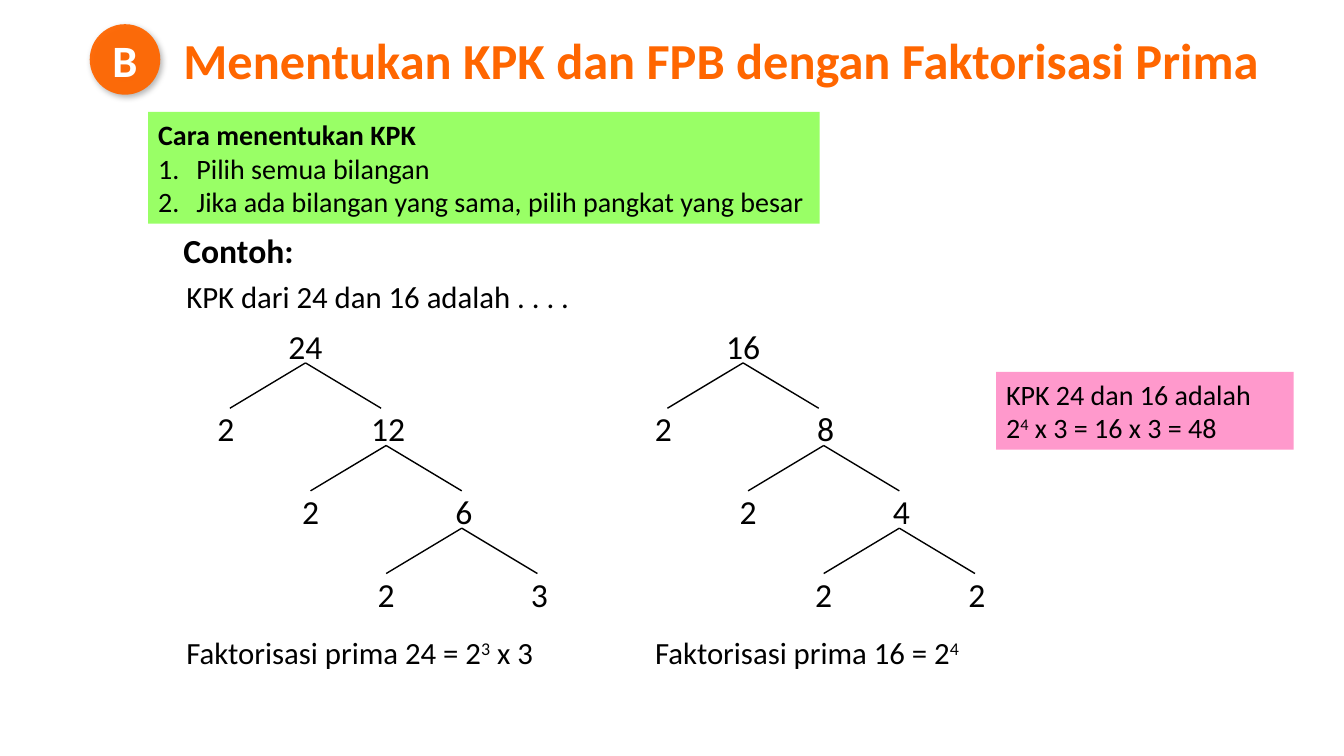
import pptx
import pptx.util
import pptx.dml.color
import pptx.enum.shapes
import pptx.enum.text
from lxml import etree
from pptx.oxml.ns import qn

Inches = pptx.util.Inches
Pt = pptx.util.Pt
ALIGN = pptx.enum.text.PP_ALIGN
SHAPE = pptx.enum.shapes.MSO_SHAPE

COLORS = {
    "orange": "FF6600",
    "green": "99FF66",
    "pink": "FF99CC",
    "black": "000000",
    "white": "FFFFFF",
}
LEVELS = [(0, -0.79, 0.82), (0.8, 0.05, 1.57), (1.55, 0.8, 2.32)]
LEVEL_STEP = 0.82


def rgb(name):
    return pptx.dml.color.RGBColor.from_string(COLORS[name])


def write(p, parts, size, color="black", bold=False, align=ALIGN.LEFT):
    p.alignment = align
    for i, text in enumerate(parts):
        r = p.add_run()
        r.text = text
        r.font.name = "Calibri"
        r.font.size = Pt(size)
        r.font.bold = bold
        r.font.color.rgb = rgb(color)
        if i == 1:
            r._r.get_or_add_rPr().set("baseline", "30000")


def number(p):
    pPr = p._p.get_or_add_pPr()
    pPr.set("marL", str(Inches(0.38)))
    pPr.set("indent", str(-Inches(0.38)))
    etree.SubElement(pPr, qn("a:buFont"), typeface="+mj-lt")
    etree.SubElement(pPr, qn("a:buAutoNum"), type="arabicPeriod")


def add_label(shapes, x, y, w, h, parts, size, **style):
    sp = shapes.add_textbox(Inches(x), Inches(y), Inches(w), Inches(h))
    tf = sp.text_frame
    tf.word_wrap = False
    tf.auto_size = pptx.enum.text.MSO_AUTO_SIZE.SHAPE_TO_FIT_TEXT
    write(tf.paragraphs[0], parts, size, **style)


def add_filled(shapes, kind, x, y, w, h, color):
    sp = shapes.add_shape(kind, Inches(x), Inches(y), Inches(w), Inches(h))
    sp.shadow.inherit = False
    sp.fill.solid()
    sp.fill.fore_color.rgb = rgb(color)
    sp.line.fill.background()
    return sp


def add_badge(shapes, letter):
    sp = add_filled(shapes, SHAPE.OVAL, 0.89, 0.24, 0.7, 0.7, "orange")
    fill_color = sp._element.spPr.find(qn("a:solidFill"))[0]
    etree.SubElement(fill_color, qn("a:alpha"), val="95000")
    effects = sp._element.spPr.find(qn("a:effectLst"))
    shadow = etree.SubElement(effects, qn("a:outerShdw"), blurRad=str(Pt(4.5)),
                              dist=str(Pt(2.6)), dir=str(53 * 60000), rotWithShape="0")
    shade = etree.SubElement(shadow, qn("a:srgbClr"), val=COLORS["black"])
    etree.SubElement(shade, qn("a:alpha"), val="30000")
    tf = sp.text_frame
    tf.margin_left = tf.margin_right = tf.margin_top = tf.margin_bottom = 0
    tf.word_wrap = False
    tf.vertical_anchor = pptx.enum.text.MSO_ANCHOR.MIDDLE
    write(tf.paragraphs[0], [letter], 32, color="white", bold=True, align=ALIGN.CENTER)


def add_panel(shapes, x, y, w, h, color, wrap):
    tf = add_filled(shapes, SHAPE.RECTANGLE, x, y, w, h, color).text_frame
    tf.word_wrap = wrap
    tf.auto_size = pptx.enum.text.MSO_AUTO_SIZE.SHAPE_TO_FIT_TEXT
    return tf


def add_branch(shapes, x, y, dx):
    line = shapes.add_connector(pptx.enum.shapes.MSO_CONNECTOR.STRAIGHT,
                                Inches(x + dx), Inches(y + 0.45), Inches(x), Inches(y))
    line.line.color.rgb = rgb("black")
    line.line.width = Pt(1)
    etree.SubElement(line._element.spPr, qn("a:effectLst"))


def add_node(shapes, x, y, value):
    add_label(shapes, x - 0.27, y, 0.54, 0.5, [str(value)], 24, align=ALIGN.CENTER)


def add_factor_tree(s, x, root, splits):
    shapes = s.shapes.add_group_shape().shapes
    add_node(shapes, x, 3.18, root)
    for i, ((apex, *offsets), factors) in enumerate(zip(LEVELS, splits)):
        for dx in (-0.75, 0.75):
            add_branch(shapes, x + apex, 3.6 + i * LEVEL_STEP, dx)
        for offset, factor in zip(offsets, factors):
            add_node(shapes, x + offset, 3.18 + (i + 1) * LEVEL_STEP, factor)


def main():
    prs = pptx.Presentation()
    prs.slide_width = Inches(13.33)
    prs.slide_height = Inches(7.5)
    s = prs.slides.add_slide(prs.slide_layouts[6])

    add_label(s.shapes, 1.72, 0.24, 10.98, 0.71,
              ["Menentukan KPK dan FPB dengan Faktorisasi Prima"], 36,
              color="orange", bold=True)
    add_badge(s.shapes, "B")

    tf = add_panel(s.shapes, 1.47, 1.11, 6.66, 1.11, "green", False)
    write(tf.paragraphs[0], ["Cara menentukan KPK"], 20, bold=True)
    for step in ("Pilih semua bilangan",
                 "Jika ada bilangan yang sama, pilih pangkat yang besar"):
        p = tf.add_paragraph()
        number(p)
        write(p, [step], 20)

    add_label(s.shapes, 1.72, 2.23, 1.31, 0.5, ["Contoh:"], 24, bold=True)
    add_label(s.shapes, 1.75, 2.71, 4.03, 0.47, ["KPK dari 24 dan 16 adalah . . . ."], 22)

    add_factor_tree(s, 3.03, 24, [(2, 12), (2, 6), (2, 3)])
    add_factor_tree(s, 7.37, 16, [(2, 8), (2, 4), (2, 2)])
    add_label(s.shapes, 1.75, 6.24, 3.69, 0.47, ["Faktorisasi prima 24 = 2", "3", " x 3"], 22)
    add_label(s.shapes, 6.4, 6.24, 3.33, 0.47, ["Faktorisasi prima 16 = 2", "4"], 22)

    tf = add_panel(s.shapes, 9.88, 3.69, 2.95, 0.77, "pink", True)
    write(tf.paragraphs[0], ["KPK 24 dan 16 adalah"], 20)
    write(tf.add_paragraph(), ["2", "4", " x 3 = 16 x 3 = 48"], 20)

    prs.save("out.pptx")


if __name__ == "__main__":
    main()
